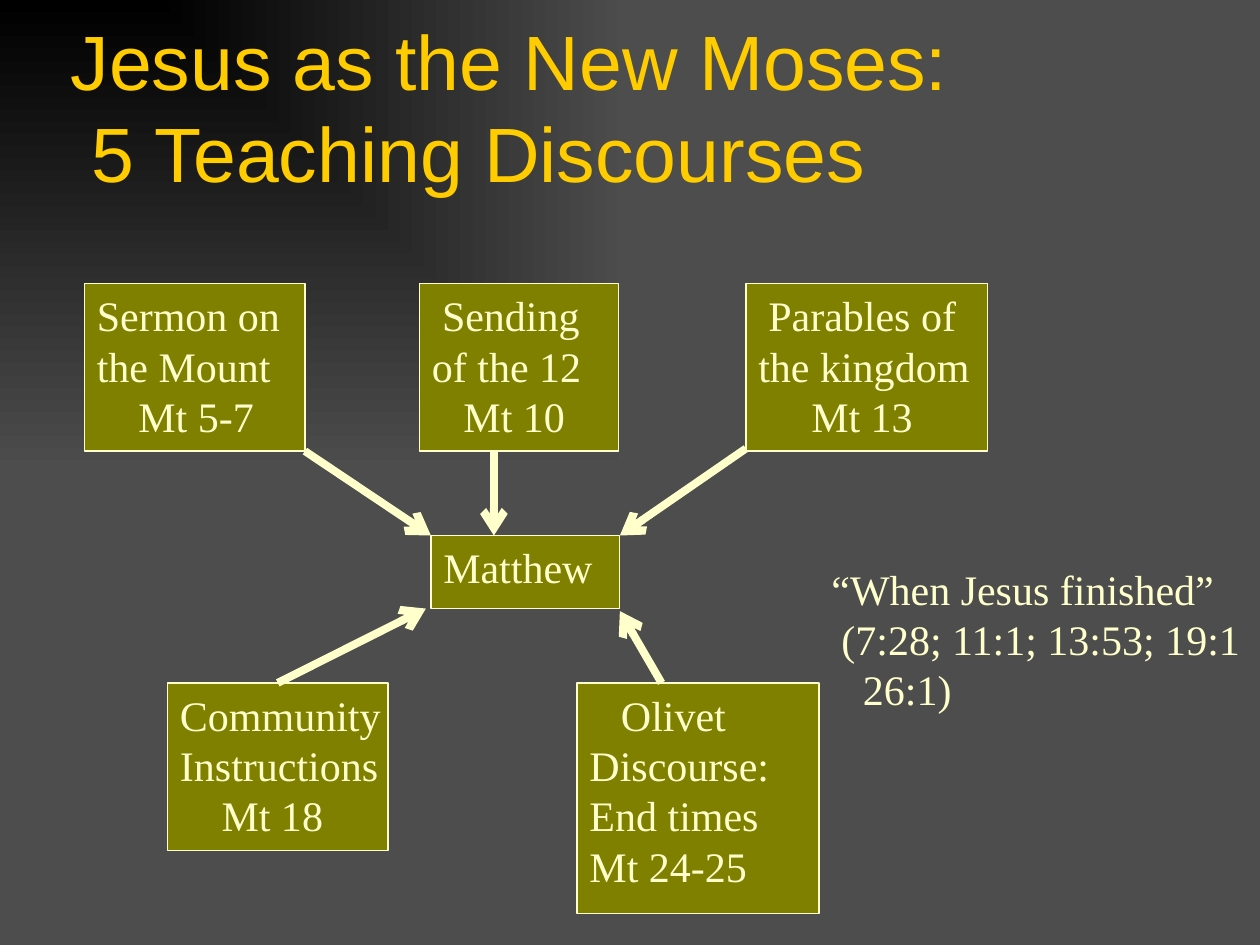
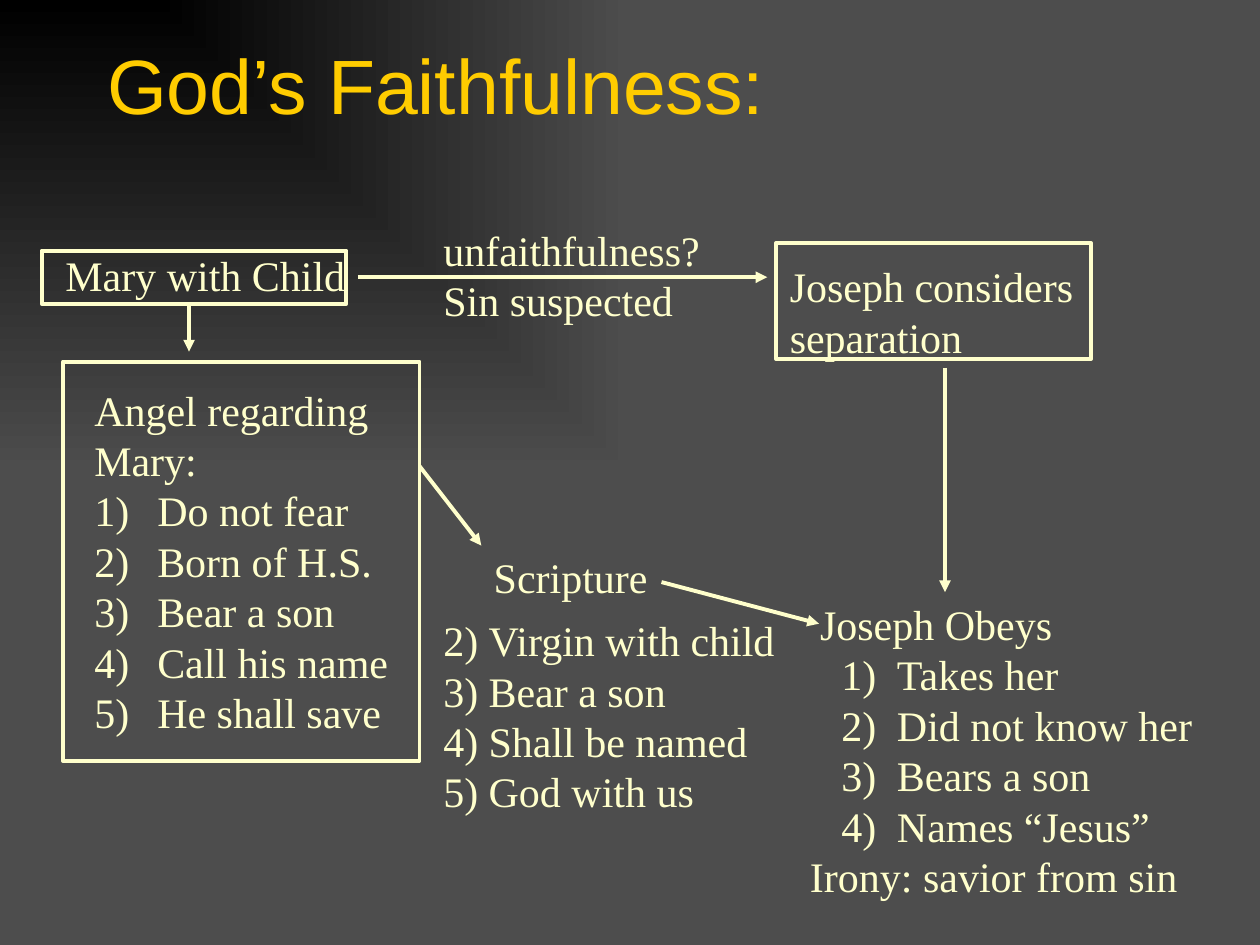
"""Build two slides on Matthew: the five teaching discourses and God's faithfulness."""
from lxml import etree
from pptx import Presentation
from pptx import util as u
from pptx.dml.color import RGBColor
from pptx.enum import shapes, text
from pptx.oxml import ns

GOLD, CREAM, OLIVE = "FFCC00", "FFFFCC", "808000"
BLACK, GREY = "000000", "4D4D4D"


def rgb(value):
    return RGBColor.from_string(value)


def write(frame, lines, wrap=False):
    frame.word_wrap = wrap
    frame.vertical_anchor = text.MSO_ANCHOR.TOP
    for i, (words, left, hang, number) in enumerate(lines):
        line = frame.paragraphs[0] if i == 0 else frame.add_paragraph()
        line.text = words
        line.alignment = text.PP_ALIGN.LEFT
        props = line._p.get_or_add_pPr()
        props.set("marL", str(u.Inches(left)))
        props.set("indent", str(u.Inches(-hang)))
        if number:
            etree.SubElement(props, ns.qn("a:buAutoNum"), type="arabicParenR", startAt=str(number))
        for run in line.runs:
            run.font.name, run.font.size = "Times New Roman", u.Pt(24)
            run.font.color.rgb = rgb(CREAM)


prs = Presentation()
prs.slide_width, prs.slide_height = u.Inches(10), u.Inches(7.5)

backdrop = prs.slide_master.background.fill
backdrop.gradient()
for stop, colour in zip(backdrop.gradient_stops, (BLACK, GREY)):
    stop.color.rgb = rgb(colour)
linear = next(prs.slide_master.element.iter(ns.qn("a:lin")))
corner = etree.Element(ns.qn("a:path"), path="rect")
etree.SubElement(corner, ns.qn("a:fillToRect"), r="100000", b="100000")
linear.getparent().replace(linear, corner)

titles = [
    ("Jesus as the New Moses:\v 5 Teaching Discourses", (0.46, 0.04, 9.92, 1.58)),
    ("God’s Faithfulness:", (0.75, 0.25, 8.5, 0.83)),
]
slides = []
for heading, place in titles:
    slide = prs.slides.add_slide(prs.slide_layouts[5])
    title = slide.shapes.title
    title.left, title.top, title.width, title.height = map(u.Inches, place)
    title.text_frame.text = heading
    title.text_frame.auto_size = text.MSO_AUTO_SIZE.NONE
    title.text_frame.vertical_anchor = text.MSO_ANCHOR.BOTTOM
    title.text_frame.paragraphs[0].alignment = text.PP_ALIGN.LEFT
    for run in title.text_frame.paragraphs[0].runs:
        run.font.name, run.font.size = "Arial", u.Pt(44)
        run.font.color.rgb = rgb(GOLD)
    slides.append(slide)
discourses, faithfulness = slides

boxes = [
    (discourses, (0.67, 2.25, 1.75, 1.33), OLIVE,
     [("Sermon on", 0), ("the Mount", 0), ("Mt 5-7", 0.33)]),
    (discourses, (3.33, 2.25, 1.58, 1.33), OLIVE,
     [("Sending", 0.08), ("of the 12", 0), ("Mt 10", 0.25)]),
    (discourses, (5.92, 2.25, 1.92, 1.33), OLIVE,
     [("Parables of", 0.08), ("the kingdom", 0), ("Mt 13", 0.42)]),
    (discourses, (3.42, 4.25, 1.5, 0.58), OLIVE, [("Matthew", 0)]),
    (discourses, (4.58, 5.42, 1.92, 1.83), OLIVE,
     [("Olivet", 0.25), ("Discourse:", 0), ("End times", 0), ("Mt 24-25", 0)]),
    (discourses, (1.33, 5.42, 1.75, 1.33), OLIVE,
     [("Community", 0), ("Instructions", 0), ("Mt 18", 0.33)]),
    (faithfulness, (0.5, 2.87, 2.83, 3.17), None, []),
    (faithfulness, (0.33, 1.99, 2.42, 0.42), None, []),
    (faithfulness, (6.16, 1.93, 2.5, 0.92), None, []),
]
for slide, place, fill, lines in boxes:
    box = slide.shapes.add_shape(shapes.MSO_SHAPE.RECTANGLE, *map(u.Inches, place))
    box.shadow.inherit = False
    box.line.color.rgb = rgb(CREAM)
    if fill:
        box.fill.solid()
        box.fill.fore_color.rgb = rgb(fill)
        box.line.width = u.Pt(0.75)
        community = box
    else:
        box.fill.background()
        box.line.width = u.Pt(2.25)
    write(box.text_frame, [(words, left, 0, None) for words, left in lines])

angel = [("Angel regarding", 0.5, 0.5, None), ("Mary:", 0.5, 0.5, None)]
angel += [(words, 0.5, 0.5, 1) for words in
          ("Do not fear", "Born of H.S.", "Bear a son", "Call his name", "He shall save")]
prophecy = [(words, 0.36, 0.36, 2) for words in
            ("Virgin with child", "Bear a son", "Shall be named", "God with us")]
obedience = [("Joseph Obeys", 0.08, 0, None)]
obedience += [(words, 0.69, 0.44, 1) for words in
              ("Takes her", "Did not know her", "Bears a son", "Names “Jesus”")]
obedience += [("Irony: savior from sin", 0, 0, None)]

notes = [
    (discourses, (6.5, 4.42, 3.48, 1.72), False,
     [("“When Jesus finished”", 0, 0, None), ("(7:28; 11:1; 13:53; 19:1", 0.08, 0, None),
      ("26:1)", 0.25, 0, None)]),
    (faithfulness, (0.42, 1.93, 2.42, 0.5), False, [("Mary with Child", 0, 0, None)]),
    (faithfulness, (6.17, 2.02, 2.53, 0.9), False,
     [("Joseph considers", 0, 0, None), ("separation", 0, 0, None)]),
    (faithfulness, (0.65, 3, 2.53, 2.9), False, angel),
    (faithfulness, (3.82, 4.33, 1.42, 0.5), False, [("Scripture", 0, 0, None)]),
    (faithfulness, (6.33, 4.7, 3.25, 2.52), True, obedience),
    (faithfulness, (3.42, 1.73, 2.26, 0.91), False,
     [("unfaithfulness?", 0, 0, None), ("Sin suspected", 0, 0, None)]),
    (faithfulness, (3.42, 4.83, 3, 1.7), True, prophecy),
]
for slide, place, wrap, lines in notes:
    note = slide.shapes.add_textbox(*map(u.Inches, place))
    write(note.text_frame, lines, wrap)
    note.text_frame.auto_size = text.MSO_AUTO_SIZE.SHAPE_TO_FIT_TEXT

arrow_sets = [
    (discourses, 4.5, "arrow", [
        (2.42, 3.58, 3.42, 4.25), (3.92, 3.58, 3.92, 4.25), (5.92, 3.56, 4.92, 4.25),
        (5.25, 5.42, 4.92, 4.85), (2.21, 5.42, 3.38, 4.83)]),
    (faithfulness, 2.25, "triangle", [
        (1.5, 2.43, 1.5, 2.79), (3.33, 3.7, 3.82, 4.33), (5.25, 4.62, 6.5, 4.95),
        (7.5, 2.92, 7.5, 4.7), (2.84, 2.2, 6.09, 2.2)]),
]
for slide, width, head, routes in arrow_sets:
    for route in routes:
        arrow = slide.shapes.add_connector(
            shapes.MSO_CONNECTOR.STRAIGHT, *map(u.Inches, route))
        arrow.line.color.rgb = rgb(CREAM)
        arrow.line.width = u.Pt(width)
        etree.SubElement(arrow.line._get_or_add_ln(), ns.qn("a:tailEnd"), type=head)
        etree.SubElement(arrow._element.spPr, ns.qn("a:effectLst"))
        if slide is discourses and route == routes[-1]:
            arrow.begin_connect(community, 0)

prs.save("out.pptx")
